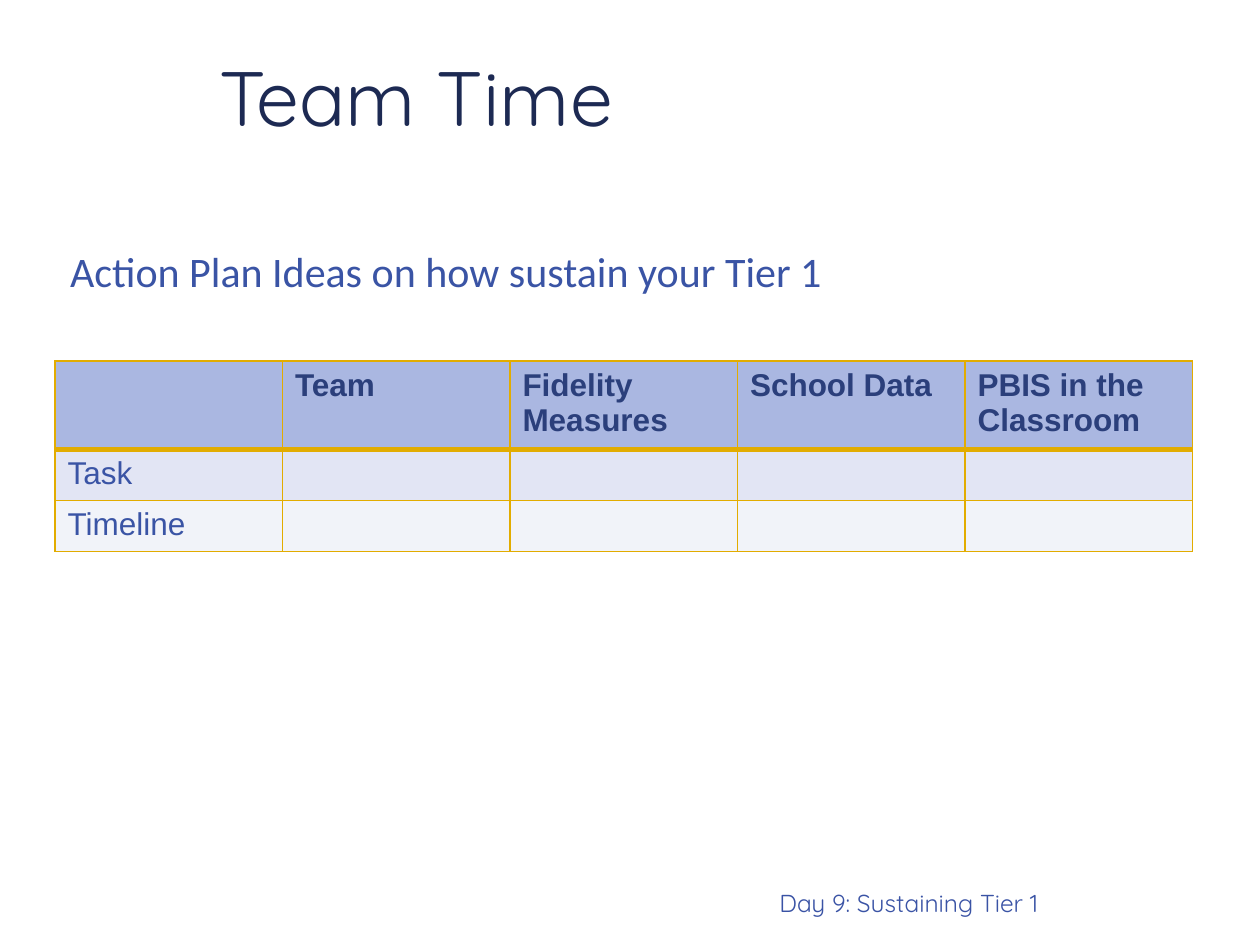
from dataclasses import dataclass
from lxml.etree import SubElement
from pptx import Presentation
from pptx.dml.color import RGBColor
from pptx.enum.text import MSO_ANCHOR, MSO_AUTO_SIZE, PP_ALIGN
from pptx.oxml.ns import qn
from pptx.util import Pt


@dataclass(frozen=True)
class Theme:
    navy: str = "1D2A53"
    header_text: str = "2B3F7B"
    blue: str = "3A54A5"
    footer_blue: str = "3A53A5"
    gold: str = "E2AC00"
    row_fills: tuple = ("AAB7E1", "E2E5F4", "F1F3F9")
    title_size: int = 44
    subtitle_size: int = 24
    table_size: int = 18
    footer_size: int = 14
    display_font: str = "Quicksand"
    body_font: str = "Calibri"
    table_font: str = "Arial"


theme = Theme()


def write_text(text_frame, text, size, font, color, bold=False,
               align=PP_ALIGN.LEFT, anchor=MSO_ANCHOR.TOP):
    text_frame.word_wrap = True
    text_frame.vertical_anchor = anchor
    paragraph = text_frame.paragraphs[0]
    paragraph.alignment = align
    paragraph.font.size = Pt(size)
    if text:
        run = paragraph.add_run()
        run.text = text
        run.font.size = Pt(size)
        run.font.name = font
        run.font.bold = bold
        run.font.color.rgb = RGBColor.from_string(color)


def set_borders(cell, widths):
    properties = cell._tc.get_or_add_tcPr()
    for index, (side, width) in enumerate(widths.items()):
        line = properties.makeelement(qn(f"a:{side}"), {"w": str(Pt(width))})
        fill = SubElement(line, qn("a:solidFill"))
        SubElement(fill, qn("a:srgbClr"), val=theme.gold)
        properties.insert(index, line)


presentation = Presentation()
presentation.slide_width = Pt(720)
presentation.slide_height = Pt(540)
slide = presentation.slides.add_slide(presentation.slide_layouts[5])

title = slide.shapes.title
title.left, title.top, title.width, title.height = Pt(118), Pt(18.7), Pt(550), Pt(72)
title.text_frame.auto_size = MSO_AUTO_SIZE.NONE
write_text(title.text_frame, "Team Time", theme.title_size, theme.display_font,
           theme.navy, anchor=MSO_ANCHOR.MIDDLE)

subtitle = slide.shapes.add_textbox(Pt(33), Pt(137), Pt(649), Pt(36))
write_text(subtitle.text_frame, "Action Plan Ideas on how sustain your\u00a0Tier 1",
           theme.subtitle_size, theme.body_font, theme.blue)

footer = slide.shapes.add_textbox(Pt(205), Pt(481.7), Pt(395.5), Pt(46))
write_text(footer.text_frame, "Day 9: Sustaining Tier 1", theme.footer_size,
           theme.display_font, theme.footer_blue, align=PP_ALIGN.RIGHT,
           anchor=MSO_ANCHOR.BOTTOM)

rows = [
    ["", "Team", "Fidelity Measures", "School Data", "PBIS in the Classroom"],
    ["Task", "", "", "", ""],
    ["Timeline", "", "", "", ""],
]
row_heights = [47.6, 29.2, 29.2]
column_width = 130

table = slide.shapes.add_table(
    len(rows), len(rows[0]), Pt(31.4), Pt(206.4),
    Pt(column_width * len(rows[0])), Pt(sum(row_heights))).table
table.first_row = False
table.horz_banding = False
for column in table.columns:
    column.width = Pt(column_width)

for row_index, labels in enumerate(rows):
    table.rows[row_index].height = Pt(row_heights[row_index])
    is_header = row_index == 0
    for column_index, label in enumerate(labels):
        cell = table.cell(row_index, column_index)
        cell.fill.solid()
        cell.fill.fore_color.rgb = RGBColor.from_string(theme.row_fills[row_index])
        write_text(cell.text_frame, label, theme.table_size, theme.table_font,
                   theme.header_text if is_header else theme.blue, bold=is_header)
        set_borders(cell, {"lnL": 1, "lnR": 1,
                           "lnT": 3 if row_index == 1 else 1,
                           "lnB": 3 if is_header else 1})

presentation.save("out.pptx")
